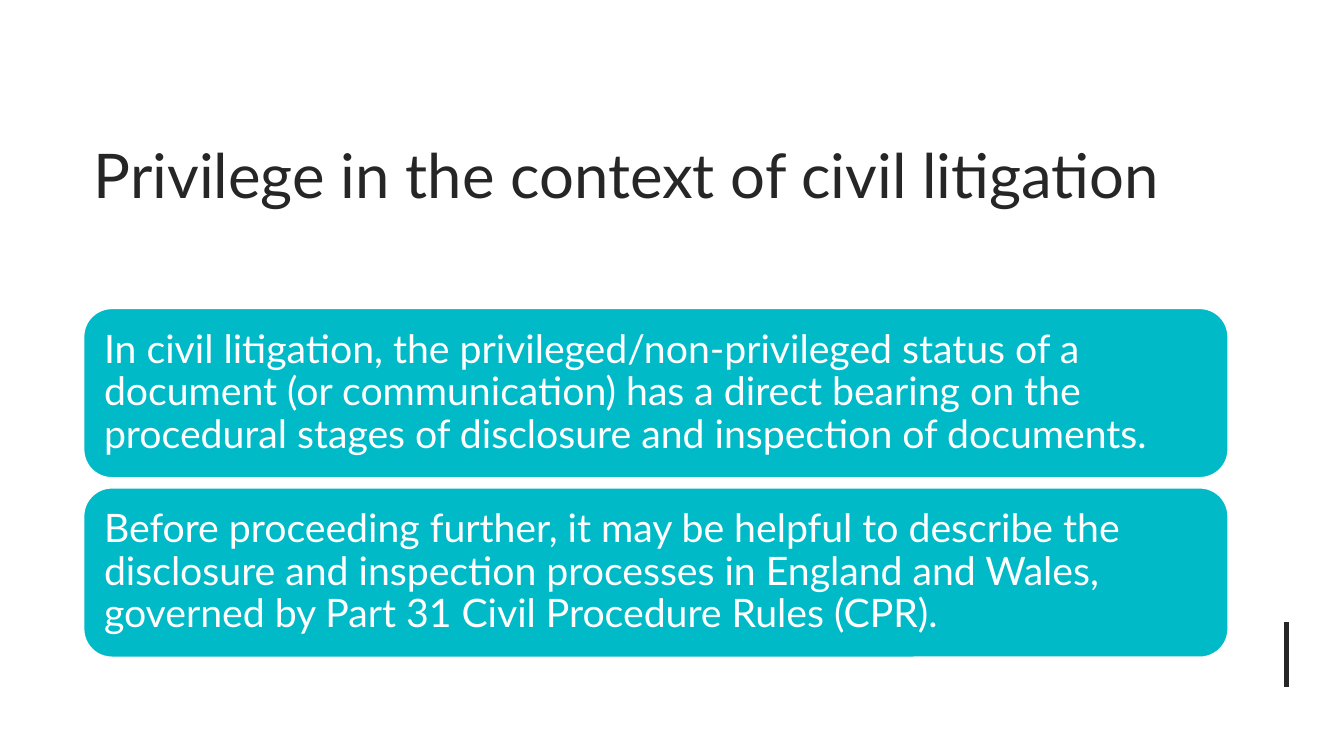
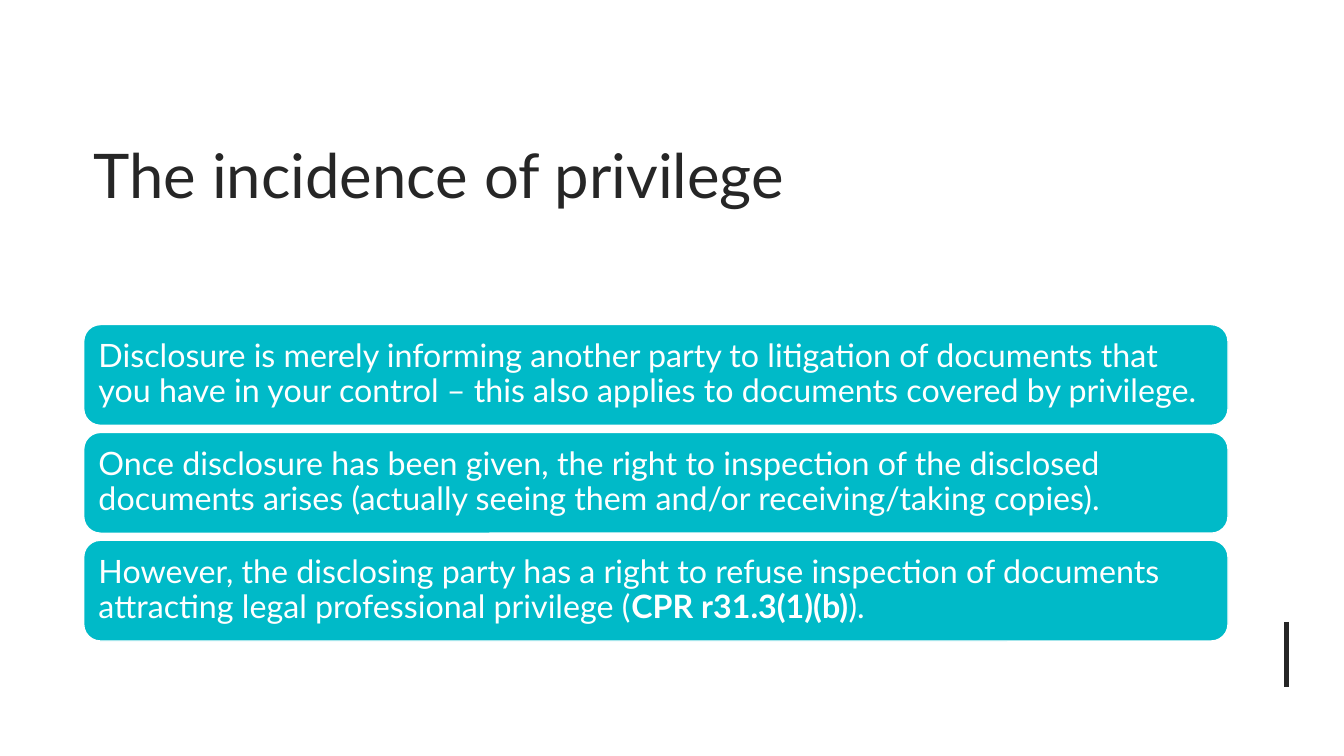
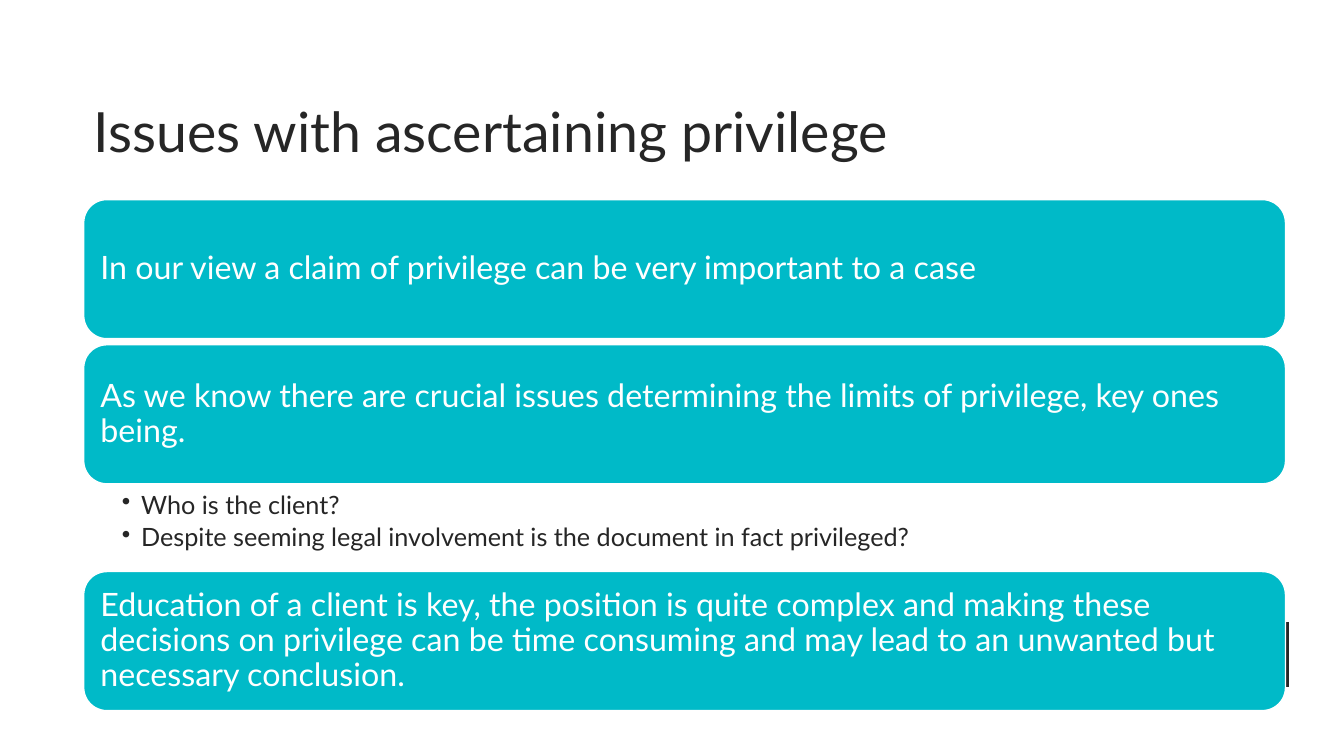
from dataclasses import dataclass

from lxml import etree
from pptx import Presentation
from pptx.dml.color import RGBColor
from pptx.enum.shapes import MSO_CONNECTOR, MSO_SHAPE
from pptx.enum.text import MSO_ANCHOR, PP_ALIGN
from pptx.oxml.ns import qn
from pptx.util import Emu, Pt

PX = 9144
FONT = "Lato"
INK = RGBColor(0x26, 0x26, 0x26)
TEAL = RGBColor(0x00, 0xBA, 0xC8)
WHITE = RGBColor(0xFF, 0xFF, 0xFF)
ROUND = MSO_SHAPE.ROUNDED_RECTANGLE
STRAIGHT = MSO_CONNECTOR.STRAIGHT
MIDDLE = MSO_ANCHOR.MIDDLE
TOP = MSO_ANCHOR.TOP
LEFT = PP_ALIGN.LEFT

MARGIN = 83
TITLE_TOP = 94
TITLE_WIDTH = 1135
BULLETS_HEIGHT = 81
BULLET_INDENT = 19


@dataclass(frozen=True)
class Run:
    text: str
    bold: bool = False


@dataclass(frozen=True)
class Card:
    runs: tuple[Run, ...]
    bullets: tuple[str, ...] = ()


@dataclass(frozen=True)
class Page:
    title: str
    title_size: float
    title_height: int
    top: int
    width: int
    height: int
    gap: int
    inset: int
    size: int
    cards: tuple[Card, ...]


PAGES = (
    Page(
        "Privilege in the context of civil litigation", 44, 157,
        top=306, width=1135, height=168, gap=10, inset=12, size=28,
        cards=(
            Card((Run("In civil litigation, the privileged/non-privileged status of a "
                      "document (or communication) has a direct bearing on the "
                      "procedural stages of disclosure and inspection of documents."),)),
            Card((Run("Before proceeding further, it may be helpful to describe the "
                      "disclosure and inspection processes in England and Wales, "
                      "governed by Part 31 Civil Procedure Rules (CPR)."),)),
        ),
    ),
    Page(
        "The incidence of privilege", 44, 157,
        top=322, width=1135, height=100, gap=7, inset=10, size=23,
        cards=(
            Card((Run("Disclosure is merely informing another party to litigation of "
                      "documents that you have in your control – this also applies to "
                      "documents covered by privilege."),)),
            Card((Run("Once disclosure has been given, the right to inspection of "
                      "the disclosed documents arises (actually seeing them and/or "
                      "receiving/taking copies)."),)),
            Card((Run("However, the disclosing party has a right to refuse inspection "
                      "of documents attracting legal professional privilege ("),
                  Run("CPR r31.3(1)(b)", bold=True),
                  Run(")."))),
        ),
    ),
    Page(
        "Issues with ascertaining privilege", 39.6, 71,
        top=198, width=1192, height=138, gap=6, inset=10, size=23,
        cards=(
            Card((Run("In our view a claim of privilege can be very important to a case"),)),
            Card((Run("As we know there are crucial issues determining the limits of "
                      "privilege, key ones being."),),
                 bullets=("Who is the client?",
                          "Despite seeming legal involvement is the document in fact "
                          "privileged?")),
            Card((Run("Education of a client is key, the position is quite complex and "
                      "making these decisions on privilege can be time consuming and may "
                      "lead to an unwanted but necessary conclusion."),)),
        ),
    ),
)


def px(n: int) -> Emu:
    return Emu(n * PX)


def box(left: int, top: int, width: int, height: int) -> tuple[Emu, ...]:
    return px(left), px(top), px(width), px(height)


def write(sp, paragraphs: list[tuple[Run, ...]], *, size: float, color: RGBColor = INK,
          insets: tuple[int, int, int, int] = (10, 5, 10, 5), anchor=MIDDLE,
          spacing: float = 1.0, after: float = 0, bullet: bool = False) -> None:
    tf = sp.text_frame
    tf.word_wrap = True
    tf.vertical_anchor = anchor
    tf.margin_left, tf.margin_top, tf.margin_right, tf.margin_bottom = map(px, insets)
    for i, runs in enumerate(paragraphs):
        p = tf.add_paragraph() if i else tf.paragraphs[0]
        p.alignment = LEFT
        p.line_spacing = spacing
        p.space_after = Pt(after)
        if bullet:
            pPr = p._p.get_or_add_pPr()
            pPr.set("marL", str(px(BULLET_INDENT)))
            pPr.set("indent", str(px(-BULLET_INDENT)))
            etree.SubElement(pPr, qn("a:buChar")).set("char", "•")
        for run in runs:
            r = p.add_run()
            r.text = run.text
            r.font.name = FONT
            r.font.size = Pt(size)
            r.font.bold = run.bold
            r.font.color.rgb = color


def add_frame(s, page: Page) -> None:
    bar = s.shapes.add_connector(STRAIGHT, px(1276), px(617), px(1276), px(682))
    bar.line.color.rgb = INK
    bar.line.width = Pt(3)
    etree.SubElement(bar._element.spPr, qn("a:effectLst"))
    title = s.shapes.add_textbox(*box(MARGIN, TITLE_TOP, TITLE_WIDTH, page.title_height))
    write(title, [(Run(page.title),)], size=page.title_size)


def add_card(s, page: Page, card: Card, top: int) -> None:
    sp = s.shapes.add_shape(ROUND, *box(MARGIN, top, page.width, page.height))
    sp.shadow.inherit = False
    sp.fill.solid()
    sp.fill.fore_color.rgb = TEAL
    sp.line.color.rgb = WHITE
    sp.line.width = Pt(1)
    write(sp, [card.runs], size=page.size, color=WHITE,
          insets=(page.inset,) * 4, spacing=0.9)


def add_bullets(s, page: Page, bullets: tuple[str, ...], top: int) -> None:
    sp = s.shapes.add_textbox(*box(MARGIN, top, page.width, BULLETS_HEIGHT))
    write(sp, [(Run(text),) for text in bullets], size=18, insets=(38, 3, 18, 3),
          anchor=TOP, spacing=0.9, after=3.6, bullet=True)


def add_page(prs, page: Page) -> None:
    s = prs.slides.add_slide(prs.slide_layouts[6])
    add_frame(s, page)
    top = page.top
    for card in page.cards:
        add_card(s, page, card, top)
        top += page.height + page.gap
        if card.bullets:
            add_bullets(s, page, card.bullets, top)
            top += BULLETS_HEIGHT


def main() -> None:
    prs = Presentation()
    prs.slide_width, prs.slide_height = px(1333), px(750)
    for page in PAGES:
        add_page(prs, page)
    prs.save("out.pptx")


if __name__ == "__main__":
    main()
